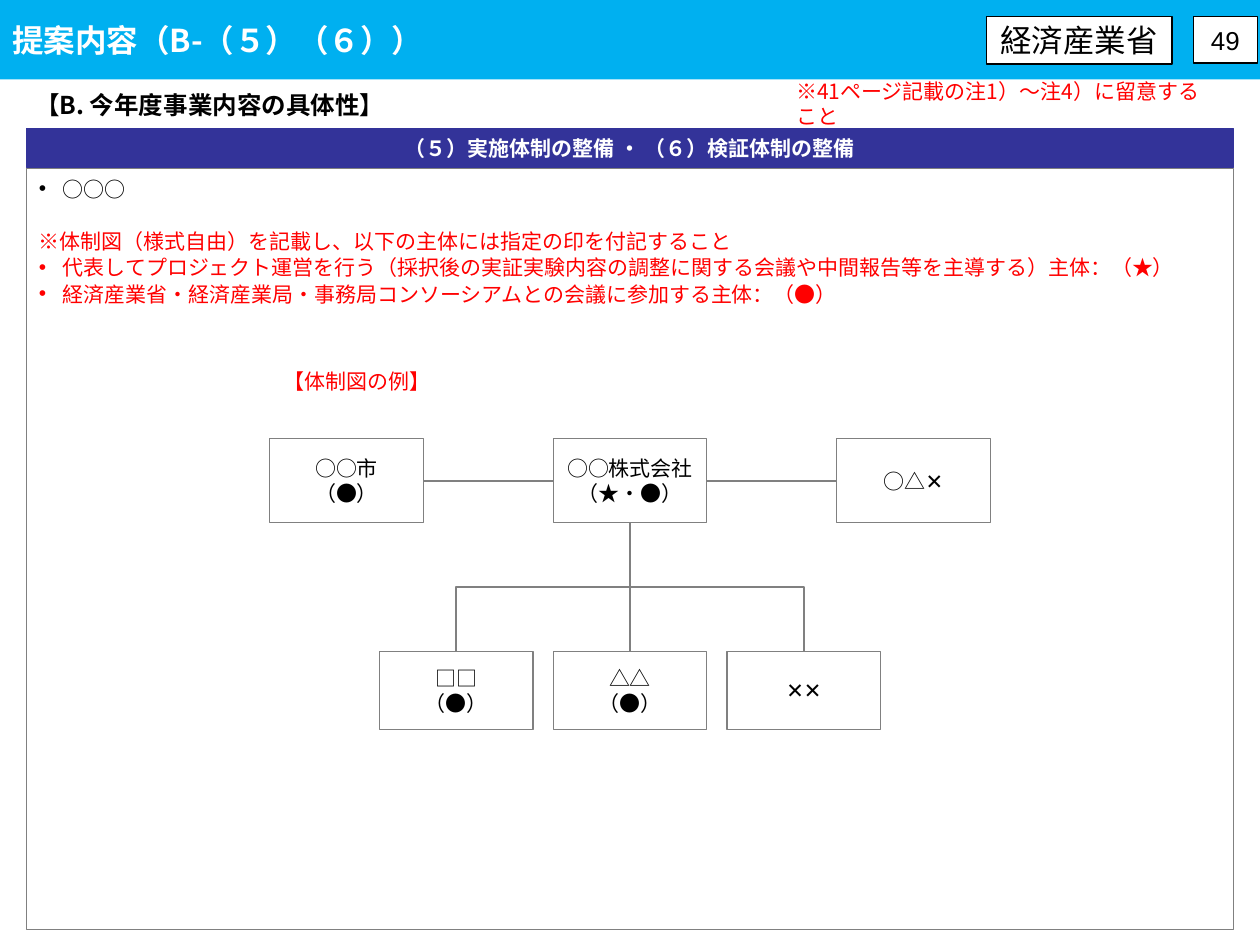
from dataclasses import dataclass

from lxml import etree
from pptx import Presentation
from pptx.dml.color import RGBColor
from pptx.enum.shapes import MSO_CONNECTOR, MSO_SHAPE
from pptx.enum.text import MSO_ANCHOR, PP_ALIGN
from pptx.oxml.ns import qn
from pptx.util import Inches, Pt


@dataclass(frozen=True)
class Theme:
    sky: str = "00B0F0"
    navy: str = "333399"
    gray: str = "808080"
    red: str = "FF0000"
    black: str = "000000"
    white: str = "FFFFFF"
    title: float = 18
    number: float = 14.8
    heading: float = 14
    body: float = 12
    leading: float = 15
    cjk: str = "Noto Sans CJK JP"
    latin: str = "Arial"


T = Theme()
prs = Presentation()
prs.slide_width, prs.slide_height = Inches(10), Inches(7.5)
s = prs.slides.add_slide(prs.slide_layouts[6])


def add_box(at, fill=None, line=None, width=0.75, anchor=MSO_ANCHOR.MIDDLE):
    sp = s.shapes.add_shape(MSO_SHAPE.RECTANGLE, *map(Inches, at))
    sp.shadow.inherit = False
    for part, color in ((sp.fill, fill), (sp.line.fill, line)):
        if color:
            part.solid()
            part.fore_color.rgb = RGBColor.from_string(color)
        else:
            part.background()
    if line:
        sp.line.width = Pt(width)
    sp.text_frame.word_wrap = True
    sp.text_frame.vertical_anchor = anchor
    return sp


def write(tf, lines, size=T.body, color=T.black, name=T.cjk, bold=False, **layout):
    for i, line in enumerate(lines):
        p = tf.paragraphs[0] if i == 0 else tf.add_paragraph()
        p.text = line
        for key, value in layout.items():
            setattr(p, key, value)
        for r in p.runs:
            for key, value in {"size": Pt(size), "name": name, "bold": bold}.items():
                setattr(r.font, key, value)
            r.font.color.rgb = RGBColor.from_string(color)
            etree.SubElement(r.font._element, qn("a:ea"), typeface=T.cjk)


CENTER = PP_ALIGN.CENTER

sp = add_box((0, 0, 10, 0.63), T.sky)
write(sp.text_frame, ["提案内容（B-（５）（６））"], T.title, T.white, bold=True, alignment=PP_ALIGN.LEFT)
sp = add_box((7.83, 0.13, 1.47, 0.38), T.white, T.black, 1)
write(sp.text_frame, ["経済産業省"], T.title, name=T.latin, alignment=CENTER)
sp = add_box((9.47, 0.13, 0.51, 0.37), T.white, T.black)
write(sp.text_frame, ["49"], T.number, name=T.latin, alignment=CENTER)
sp = add_box((0.21, 1.02, 9.58, 0.31), T.navy, T.navy, 0.5)
write(sp.text_frame, ["（５）実施体制の整備 ・ （６）検証体制の整備"], color=T.white, name=T.latin,
      bold=True, alignment=CENTER, line_spacing=Pt(T.leading))

sp = add_box((0.21, 1.34, 9.58, 6.04), line=T.gray, width=0.5, anchor=MSO_ANCHOR.TOP)
tf = sp.text_frame
body = [
    ("○○○", T.black, True),
    ("※体制図（様式自由）を記載し、以下の主体には指定の印を付記すること", T.red, False),
    ("代表してプロジェクト運営を行う（採択後の実証実験内容の調整に関する会議や中間報告等を主導する）主体：（★）", T.red, True),
    ("経済産業省・経済産業局・事務局コンソーシアムとの会議に参加する主体：（●）", T.red, True),
]
write(tf, [text for text, _, _ in body], alignment=PP_ALIGN.LEFT, line_spacing=Pt(T.leading))
for p, (_, color, bulleted) in zip(tf.paragraphs, body):
    p.runs[0].font.color.rgb = RGBColor.from_string(color)
    if bulleted:
        pPr = p._p.get_or_add_pPr()
        pPr.set("marL", str(Inches(0.19)))
        pPr.set("indent", str(-Inches(0.19)))
        etree.SubElement(pPr, qn("a:buFont"), typeface=T.latin)
        etree.SubElement(pPr, qn("a:buChar"), char="•")
    else:
        p.space_before = Pt(T.leading)

labels = [
    ((0.18, 0.66, 3.56, 0.34), "【B. 今年度事業内容の具体性】", T.heading, T.black, True),
    ((2.15, 2.87, 1.43, 0.31), "【体制図の例】", T.body, T.red, False),
    ((6.22, 0.67, 3.56, 0.31), "※41ページ記載の注1）～注4）に留意すること", T.body, T.red, False),
]
for at, text, size, color, bold in labels:
    tf = s.shapes.add_textbox(*map(Inches, at)).text_frame
    tf.word_wrap = True
    tf.vertical_anchor = MSO_ANCHOR.MIDDLE
    write(tf, [text], size, color, bold=bold)

MID, BOX_W = 5, 1.22
UPPER, UPPER_H, UPPER_STEP = 3.48, 0.67, 2.25
LOWER, LOWER_H, LOWER_STEP = 5.17, 0.62, 1.38
rows = [
    (UPPER, UPPER_H, UPPER_STEP, [["○○市", "（●）"], ["○○株式会社", "（★・●）"], ["○△✕"]]),
    (LOWER, LOWER_H, LOWER_STEP, [["□□", "（●）"], ["△△\v（●）"], ["✕✕"]]),
]
chart = []
for top, height, step, names in rows:
    for i, lines in enumerate(names):
        sp = add_box((MID + (i - 1) * step - BOX_W / 2, top, BOX_W, height), line=T.gray)
        write(sp.text_frame, lines, alignment=CENTER)
        chart.append(sp)

city, company, partner, _, child, _ = chart
links = []
for start, start_site, end, end_site, width in (
    (city, 3, company, 1, 1), (company, 3, partner, 1, 1), (company, 2, child, 0, 0.75),
):
    link = s.shapes.add_connector(MSO_CONNECTOR.STRAIGHT, 0, 0, 0, 0)
    link.begin_connect(start, start_site)
    link.end_connect(end, end_site)
    links.append((link, width))

drop = LOWER - UPPER - UPPER_H
mid_y = LOWER - drop / 2
for side, angle in ((-1, 90), (1, 270)):
    x = MID + side * LOWER_STEP / 2
    ends = (x + side * drop / 2, mid_y - LOWER_STEP / 2, x - side * drop / 2, mid_y + LOWER_STEP / 2)
    link = s.shapes.add_connector(MSO_CONNECTOR.ELBOW, *map(Inches, ends))
    link._element.spPr.find(qn("a:xfrm")).set("rot", str(angle * 60000))
    links.append((link, 0.75))

for link, width in links:
    link.line.color.rgb = RGBColor.from_string(T.gray)
    link.line.width = Pt(width)
    etree.SubElement(link._element.spPr, qn("a:effectLst"))

prs.save("out.pptx")
